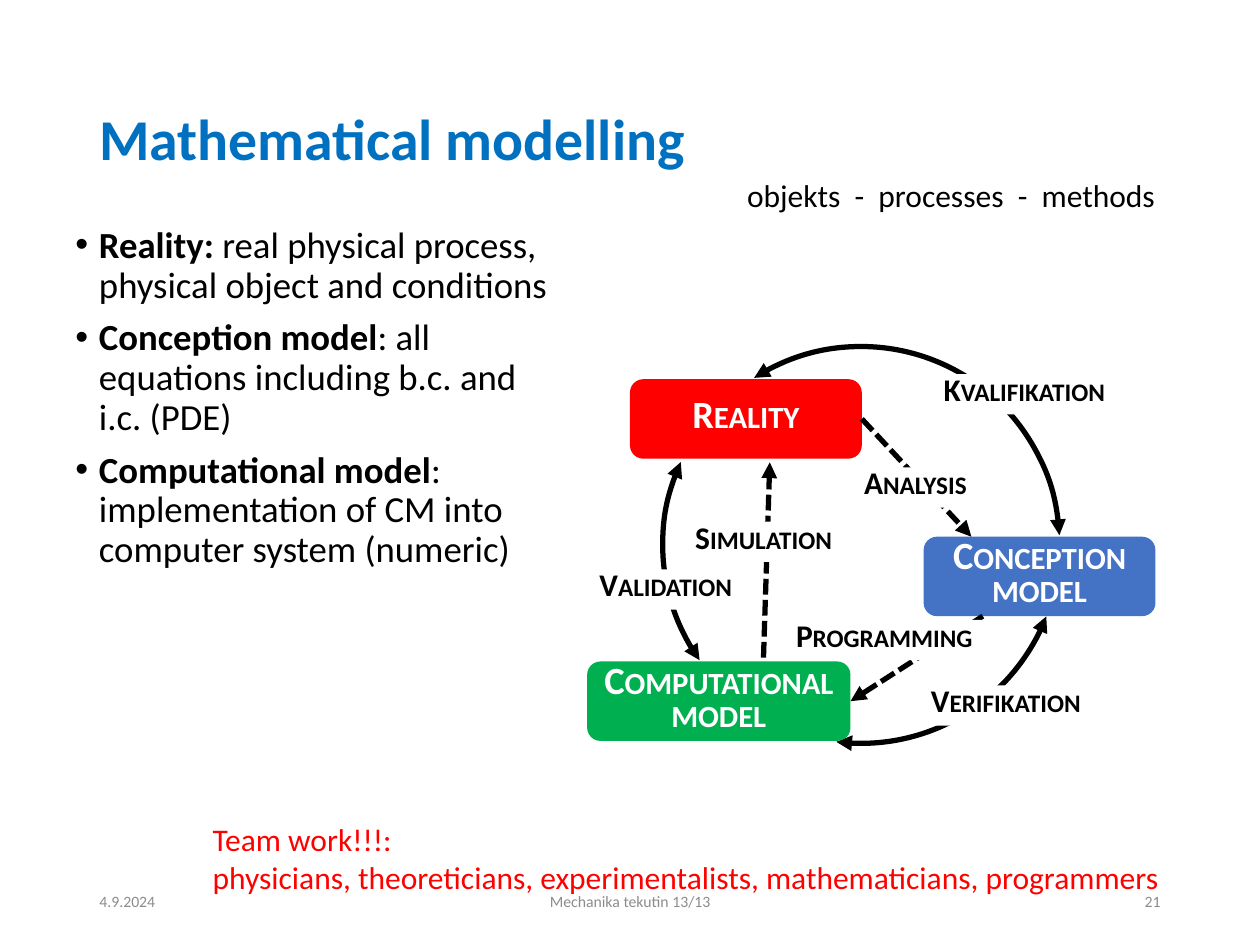
from dataclasses import dataclass

from lxml import etree
from pptx import Presentation
from pptx import util as u
from pptx.dml.color import RGBColor
from pptx.enum import dml, shapes, text
from pptx.oxml import ns

Pt = u.Pt
BLACK = RGBColor(0, 0, 0)
WHITE = RGBColor(255, 255, 255)
RED = RGBColor(255, 0, 0)
GREEN = RGBColor(0, 0xB0, 0x50)
BLUE = RGBColor(0x44, 0x72, 0xC4)
TITLE = RGBColor(0, 0x70, 0xC0)
GREY = RGBColor(0x8C, 0x8C, 0x8C)

LEFT, MID, RIGHT = text.PP_ALIGN.LEFT, text.PP_ALIGN.CENTER, text.PP_ALIGN.RIGHT
TOP, CENTER = text.MSO_ANCHOR.TOP, text.MSO_ANCHOR.MIDDLE


@dataclass
class Style:
    size: float
    color: RGBColor
    bold: bool = False
    align: int = LEFT
    anchor: int = TOP
    wrap: bool = True
    lead: float = 1.0
    caps: bool = False


@dataclass
class Note:
    words: str
    left: float
    top: float
    width: float
    height: float
    style: Style


@dataclass
class Box:
    words: str
    left: float
    top: float
    width: float
    color: RGBColor


@dataclass
class Label:
    words: str
    left: float
    top: float
    width: float


@dataclass
class Arrow:
    x1: float
    y1: float
    x2: float
    y2: float
    start: str = ""
    end: str = ""


BOX_H, LABEL_H = 45.4, 23
ARC_X, ARC_Y, ARC_D = 378.7, 198, 226.8
BOX = Style(22, WHITE, True, MID, CENTER, lead=0.7, caps=True)
LABEL = Style(18, BLACK, True, wrap=False, lead=0.7, caps=True)
FOOT_Y, FOOT_H = 500.4, 28.8

NOTES = [
    Note("Mathematical modelling", 49.7, 28.8, 620.6, 104.4,
         Style(33, TITLE, True, anchor=CENTER, lead=0.9)),
    Note("objekts  -  processes  -  methods", 419.8, 97.2, 258.5, 28.8,
         Style(18, BLACK, wrap=False)),
    Note("Team work!!!:\nphysicians, theoreticians, experimentalists, "
         "mathematicians, programmers", 114.5, 465.1, 571.7, 51.1,
         Style(18, RED, wrap=False)),
    Note("4.9.2024", 49.7, FOOT_Y, 162, FOOT_H, Style(9, GREY, anchor=CENTER)),
    Note("Mechanika tekutin 13/13", 238.3, FOOT_Y, 243.4, FOOT_H,
         Style(9, GREY, align=MID, anchor=CENTER)),
    Note("21", 508.3, FOOT_Y, 162, FOOT_H,
         Style(9, GREY, align=RIGHT, anchor=CENTER)),
]
BULLETS = [
    ("Reality: ", "real physical process, physical object and conditions"),
    ("Conception model", ": all equations including b.c. and i.c. (PDE)"),
    ("Computational model",
     ": implementation of CM into computer system (numeric)"),
]
ARCS = [(142.41, 214.31), (86.7, 122.8), (12.68, 58.32)]
BOXES = [
    Box("Conception\nmodel", 527.8, 306.7, 132.5, BLUE),
    Box("Reality", 360, 216.7, 132.5, RED),
    Box("Computational\nmodel", 335.5, 378, 150.5, GREEN),
]
ARROWS = [
    Arrow(493.9, 237.6, 555.1, 306.7, start="Reality"),
    Arrow(561.6, 352.1, 486, 400.3, end="Computational\nmodel"),
    Arrow(436.3, 375.8, 439.9, 264.2),
]
LABELS = [
    Label("Kvalifikation", 532.1, 213.8, 94.3),
    Label("Verifikation", 524.9, 391.7, 86.4),
    Label("Validation", 335.5, 325.4, 77),
    Label("Programming", 447.8, 354.2, 121.7),
    Label("Simulation", 390.2, 298.1, 79.2),
    Label("Analysis", 486.7, 267.1, 73.4),
]


def paint(run, style: Style, bold: bool) -> None:
    font = run.font
    font.name, font.size, font.bold = "Calibri", Pt(style.size), bold
    font.color.rgb = style.color
    if style.caps:
        run._r.get_or_add_rPr().set("cap", "small")


def write(shape, words: str, style: Style) -> None:
    frame = shape.text_frame
    frame.text = words
    frame.word_wrap = style.wrap
    frame.vertical_anchor = style.anchor
    for para in frame.paragraphs:
        para.alignment = style.align
        para.line_spacing = style.lead
        for run in para.runs:
            paint(run, style, style.bold)


def put_note(slide, note: Note) -> None:
    shape = slide.shapes.add_textbox(
        Pt(note.left), Pt(note.top), Pt(note.width), Pt(note.height))
    write(shape, note.words, note.style)


def put_list(slide) -> None:
    style = Style(21, BLACK, True, lead=0.9)
    shape = slide.shapes.add_textbox(Pt(36), Pt(126), Pt(290.2), Pt(356.4))
    write(shape, "\n".join(head for head, _ in BULLETS), style)
    for i, para in enumerate(shape.text_frame.paragraphs):
        props = para._p.get_or_add_pPr()
        props.set("marL", str(Pt(13.5)))
        props.set("indent", str(Pt(-13.5)))
        font = etree.SubElement(props, ns.qn("a:buFont"))
        font.set("typeface", "Arial")
        etree.SubElement(props, ns.qn("a:buChar")).set("char", "•")
        para.space_before = Pt(7.5 if i else 0)
        run = para.add_run()
        run.text = BULLETS[i][1]
        paint(run, style, False)


def put_shape(slide, kind, left: float, top: float, width: float,
              height: float, fill=None):
    shape = slide.shapes.add_shape(
        kind, Pt(left), Pt(top), Pt(width), Pt(height))
    shape.shadow.inherit = False
    shape.line.fill.background()
    if fill is None:
        shape.fill.background()
    else:
        shape.fill.solid()
        shape.fill.fore_color.rgb = fill
    return shape


def ink(shape, *ends: str) -> None:
    """Draw a black line with a triangle at each named end."""
    shape.line.color.rgb = BLACK
    shape.line.width = Pt(3)
    for end in ends:
        tip = etree.SubElement(shape.line._get_or_add_ln(), ns.qn(end))
        tip.set("type", "triangle")


def put_arrow(slide, arrow: Arrow, made: dict) -> None:
    line = slide.shapes.add_connector(
        shapes.MSO_CONNECTOR.STRAIGHT,
        Pt(arrow.x1), Pt(arrow.y1), Pt(arrow.x2), Pt(arrow.y2))
    line.line.dash_style = dml.MSO_LINE.SQUARE_DOT
    ink(line, "a:tailEnd")
    etree.SubElement(line._element.spPr, ns.qn("a:effectLst"))
    if arrow.start:
        line.begin_connect(made[arrow.start], 3)
    if arrow.end:
        line.end_connect(made[arrow.end], 3)


def main() -> None:
    deck = Presentation()
    deck.slide_width, deck.slide_height = Pt(720), Pt(540)
    slide = deck.slides.add_slide(deck.slide_layouts[6])
    kind = shapes.MSO_SHAPE

    # Bullets
    put_list(slide)

    # Cycle of models
    for first, last in ARCS:
        arc = put_shape(slide, kind.ARC, ARC_X, ARC_Y, ARC_D, ARC_D)
        arc.adjustments[0], arc.adjustments[1] = first, last
        ink(arc, "a:headEnd", "a:tailEnd")
    made = {}
    for box in BOXES:
        shape = put_shape(slide, kind.ROUNDED_RECTANGLE, box.left, box.top,
                          box.width, BOX_H, box.color)
        write(shape, box.words, BOX)
        made[box.words] = shape
    for arrow in ARROWS:
        put_arrow(slide, arrow, made)
    for label in LABELS:
        shape = put_shape(slide, kind.RECTANGLE, label.left, label.top,
                          label.width, LABEL_H, WHITE)
        write(shape, label.words, LABEL)

    # Title, remarks and footer
    for note in NOTES:
        put_note(slide, note)
    deck.save("out.pptx")


if __name__ == "__main__":
    main()
